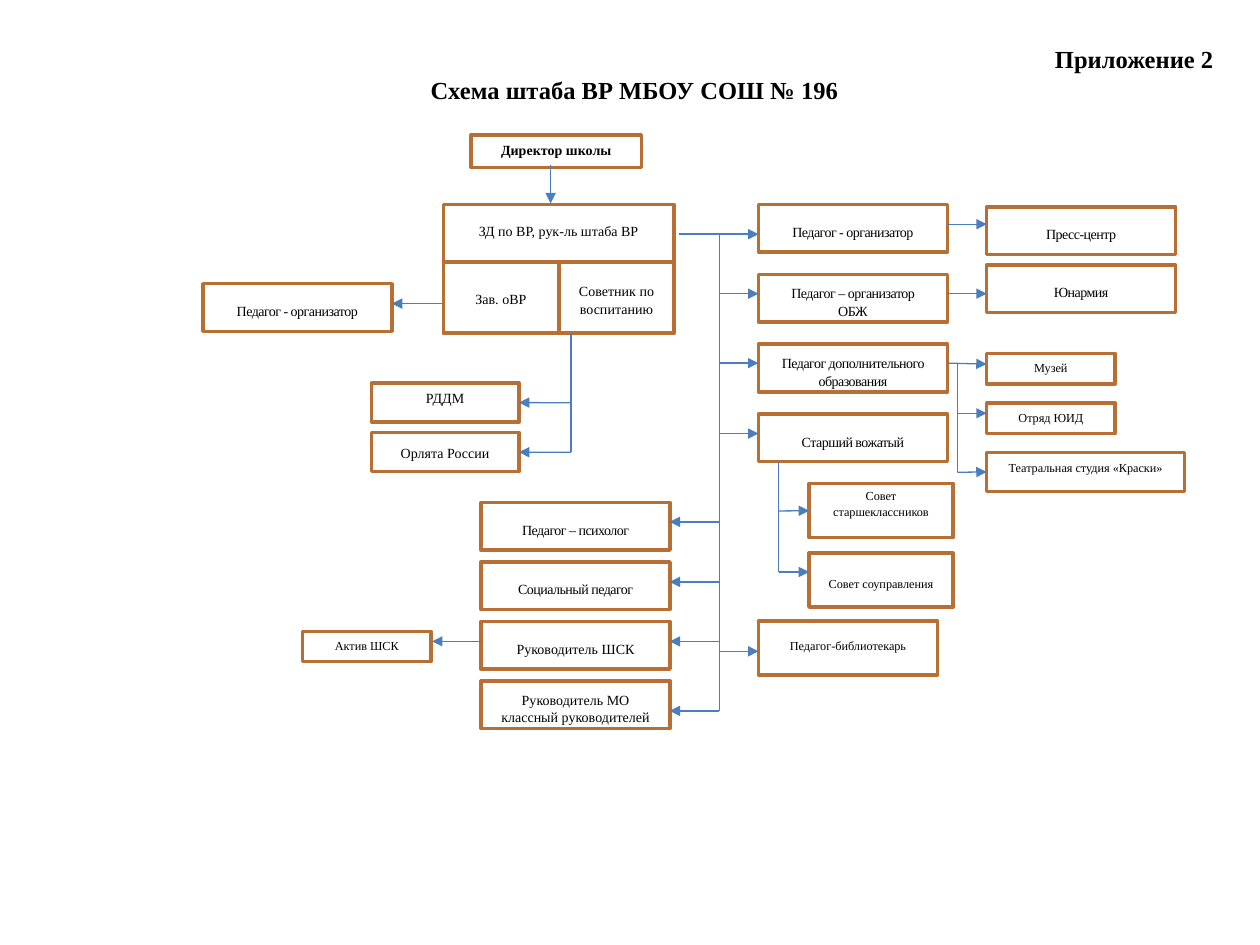
import pptx
import pptx.dml.color
import pptx.enum.shapes
import pptx.enum.text
import pptx.oxml
import pptx.oxml.ns
import pptx.util
from pptx.util import Cm

COLORS = {"text": "000000", "border": "B76F34", "arrow": "4B7EBC", "white": "FFFFFF"}
ALIGN = pptx.enum.text.PP_ALIGN
RGB = pptx.dml.color.RGBColor.from_string


def write(paragraph, text, size=8, bold=False, align=ALIGN.CENTER, spacing=0):
    """Add one formatted run; spacing is in hundredths of a point."""
    paragraph.alignment = align
    paragraph.line_spacing = 1.07
    run = paragraph.add_run()
    run.text = text
    run.font.name = "Times New Roman"
    run.font.size = pptx.util.Pt(size)
    run.font.bold = bold
    run.font.color.rgb = RGB(COLORS["text"])
    if spacing:
        run.font._element.set("spc", str(spacing))


presentation = pptx.Presentation()
presentation.slide_width = Cm(25.4)
presentation.slide_height = Cm(19.05)
slide = presentation.slides.add_slide(presentation.slide_layouts[5])

title = slide.shapes.title
title.left, title.top, title.width, title.height = Cm(0.89), Cm(0.74), Cm(23.8), Cm(1.42)
frame = title.text_frame
frame.word_wrap = True
frame.auto_size = pptx.enum.text.MSO_AUTO_SIZE.NONE
frame.vertical_anchor = pptx.enum.text.MSO_ANCHOR.TOP
frame.margin_left = frame.margin_right = Cm(0.23)
frame.margin_top = frame.margin_bottom = Cm(0.1)
write(frame.paragraphs[0], "Приложение 2", size=14, bold=True, align=ALIGN.RIGHT)
write(frame.add_paragraph(), "Схема штаба ВР МБОУ СОШ № 196", size=14, bold=True)

# Boxes: text, left, top, width, height, vertical text shift, text format
WIDE = (3.81, 0.96, 0.06)
SMALL = (2.59, 0.61, -0.03)
TIGHT = {"spacing": -30}
NOTE = {"size": 7}
boxes = [
    ("Директор школы", 9.5, 2.72, 3.43, 0.66, -0.03, {"bold": True}),
    ("ЗД по ВР, рук-ль штаба ВР", 8.94, 4.12, 4.65, 1.16, -0.06, {}),
    ("Зав. оВР", 8.94, 5.28, 2.32, 1.44, 0.02, {}),
    ("Советник по воспитанию", 11.27, 5.28, 2.32, 1.44, 0.04, {}),
    ("РДДМ", 7.49, 7.72, 2.97, 0.79, -0.1, {}),
    ("Орлята России", 7.49, 8.72, 2.97, 0.79, 0, {}),
    ("Педагог - организатор", 4.09, 5.72, *WIDE, TIGHT),
    ("Пресс-центр", 19.89, 4.17, *WIDE, TIGHT),
    ("Юнармия", 19.89, 5.34, *WIDE, TIGHT),
    ("Музей", 19.89, 7.13, *SMALL, NOTE),
    ("Отряд ЮИД", 19.89, 8.13, *SMALL, NOTE),
    ("Театральная студия «Краски»", 19.89, 9.12, 3.99, 0.79, -0.1, NOTE),
    ("Совет старшеклассников", 16.31, 9.75, 2.9, 1.09, -0.15, NOTE),
    ("Совет соуправления", 16.31, 11.15, 2.9, 1.09, 0.06, NOTE),
    ("Педагог-библиотекарь", 15.29, 12.52, 3.61, 1.09, -0.05, NOTE),
    ("Актив ШСК", 6.1, 12.73, *SMALL, NOTE),
]
right_column = ["Педагог - организатор", "Педагог – организатор ОБЖ",
                "Педагог дополнительного образования", "Старший вожатый"]
for row, text in enumerate(right_column):
    boxes.append((text, 15.29, 4.12 + 1.41 * row, *WIDE, TIGHT))
left_column = [("Педагог – психолог", TIGHT), ("Социальный педагог", TIGHT),
               ("Руководитель ШСК", {}), ("Руководитель МО классный руководителей", {})]
for row, (text, text_format) in enumerate(left_column):
    boxes.append((text, 9.7, 10.13 + 1.2 * row, *WIDE, text_format))

box_shapes = {}
for text, left, top, width, height, shift, text_format in boxes:
    shape = slide.shapes.add_shape(pptx.enum.shapes.MSO_SHAPE.RECTANGLE,
                                   Cm(left), Cm(top), Cm(width), Cm(height))
    shape.shadow.inherit = False
    shape.fill.background()
    shape.line.color.rgb = RGB(COLORS["border"])
    shape.line.width = pptx.util.Pt(2)
    frame = shape.text_frame
    frame.word_wrap = True
    frame.vertical_anchor = pptx.enum.text.MSO_ANCHOR.MIDDLE
    frame.margin_left = frame.margin_right = Cm(0.38 if width == WIDE[0] else 0.25)
    frame.margin_top = Cm(max(0, 2 * shift))
    frame.margin_bottom = Cm(max(0, -2 * shift))
    write(frame.paragraphs[0], text, **text_format)
    box_shapes[text] = shape
director = box_shapes["Директор школы"]
director.fill.solid()
director.fill.fore_color.rgb = RGB(COLORS["white"])

# Lines: x1, y1, x2, y2, arrowhead, joined box and side
TRUNK = 14.5
lines = [
    (11.1, 3.33, 11.1, 4.1, True, None),
    (13.69, 4.72, 15.29, 4.72, True, None),
    (8.92, 6.12, 7.9, 6.12, True, None),
    (9.73, 12.93, 8.71, 12.93, True, None),
    (19.1, 4.52, 19.89, 4.52, True, None),
    (19.1, 5.92, 19.89, 5.92, True, None),
    (TRUNK, 4.72, TRUNK, 14.33, False, None),
    (11.51, 6.73, 11.51, 9.12, False, None),
    (11.51, 8.12, 10.46, 8.12, True, ("РДДМ", 3)),
    (11.51, 9.12, 10.46, 9.12, True, ("Орлята России", 3)),
    (19.3, 7.32, 19.3, 9.52, False, None),
    (19.1, 7.32, 19.89, 7.34, True, None),
    (19.3, 8.33, 19.89, 8.33, True, None),
    (19.3, 9.52, 19.89, 9.52, True, ("Театральная студия «Краски»", 1)),
    (15.7, 9.32, 15.7, 11.53, False, None),
    (15.7, 10.3, 16.31, 10.3, True, ("Совет старшеклассников", 1)),
    (15.7, 11.53, 16.31, 11.53, True, None),
]
lines += [(TRUNK, y, 15.29, y, True, None) for y in (5.92, 7.32, 8.74, 13.13)]
lines += [(TRUNK, y, 13.5, y, True, None) for y in (10.52, 11.73, 12.93, 14.33)]

for x1, y1, x2, y2, arrow, joint in lines:
    connector = slide.shapes.add_connector(pptx.enum.shapes.MSO_CONNECTOR.STRAIGHT,
                                           Cm(x1), Cm(y1), Cm(x2), Cm(y2))
    connector.line.color.rgb = RGB(COLORS["arrow"])
    connector.line.width = pptx.util.Pt(0.75)
    if joint:
        connector.end_connect(box_shapes[joint[0]], joint[1])
    if arrow:
        tail = pptx.oxml.parse_xml(f'<a:tailEnd {pptx.oxml.ns.nsdecls("a")} type="triangle"/>')
        connector.line._get_or_add_ln().append(tail)
    effects = pptx.oxml.parse_xml(f'<a:effectLst {pptx.oxml.ns.nsdecls("a")}/>')
    connector._element.spPr.append(effects)

presentation.save("out.pptx")
